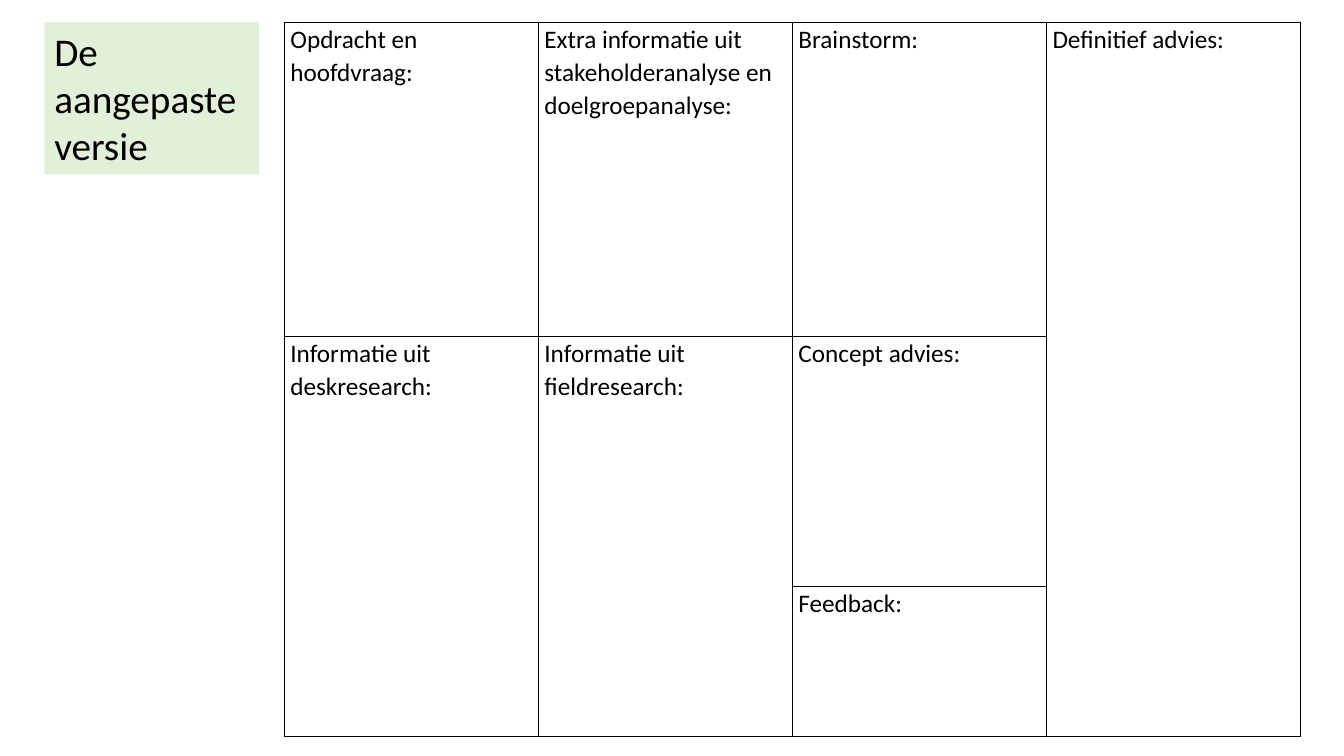
from lxml.etree import SubElement
from pptx import Presentation
from pptx.dml.color import RGBColor
from pptx.enum.shapes import MSO_SHAPE
from pptx.enum.text import MSO_ANCHOR, PP_ALIGN
from pptx.oxml.ns import qn
from pptx.util import Inches, Pt

TITLE = "De aangepaste versie"
CANVAS = [
    (0, 0, 1, "Opdracht en hoofdvraag:"),
    (0, 1, 1, "Extra informatie uit stakeholderanalyse en doelgroepanalyse:"),
    (0, 2, 1, "Brainstorm:"),
    (0, 3, 3, "Definitief advies:"),
    (1, 0, 2, "Informatie uit deskresearch:"),
    (1, 1, 2, "Informatie uit fieldresearch:"),
    (1, 2, 1, "Concept advies:"),
    (2, 2, 1, "Feedback:"),
]
COLORS = {"ink": "000000", "title": "E2F0D9"}
FONT = "Calibri"
TOP = 0.22
COLUMN_COUNT, COLUMN_WIDTH = 4, 2.52
ROW_HEIGHTS = [3.12, 2.48, 1.49]


def write(frame, text, size):
    paragraph = frame.paragraphs[0]
    paragraph.alignment = PP_ALIGN.LEFT
    run = paragraph.add_run()
    run.text = text
    run.font.size = Pt(size)
    run.font.name = FONT
    run.font.color.rgb = RGBColor.from_string(COLORS["ink"])
    return paragraph


def outline(cell):
    cell.fill.background()
    properties = cell._tc.get_or_add_tcPr()
    for position, side in enumerate(("lnL", "lnR", "lnT", "lnB")):
        border = SubElement(properties, qn(f"a:{side}"), w=str(Pt(1)))
        ink = SubElement(border, qn("a:solidFill"))
        SubElement(ink, qn("a:srgbClr"), val=COLORS["ink"])
        properties.insert(position, border)


def add_canvas(slide):
    canvas = slide.shapes.add_table(
        len(ROW_HEIGHTS), COLUMN_COUNT, Inches(2.82), Inches(TOP),
        Inches(COLUMN_COUNT * COLUMN_WIDTH), Inches(sum(ROW_HEIGHTS))).table
    canvas.first_row = canvas.horz_banding = False
    for column in canvas.columns:
        column.width = Inches(COLUMN_WIDTH)
    for row, height in zip(canvas.rows, ROW_HEIGHTS):
        row.height = Inches(height)
    for cell in canvas.iter_cells():
        outline(cell)
    for row, column, span, heading in CANVAS:
        cell = canvas.cell(row, column)
        if span > 1:
            cell.merge(canvas.cell(row + span - 1, column))
        cell.margin_left = cell.margin_right = Inches(0.06)
        cell.margin_top = cell.margin_bottom = 0
        cell.vertical_anchor = MSO_ANCHOR.TOP
        paragraph = write(cell.text_frame, heading, 18)
        paragraph.line_spacing = 1.07
        paragraph.space_after = Pt(8)


def add_title(slide):
    title = slide.shapes.add_shape(
        MSO_SHAPE.RECTANGLE, Inches(0.44), Inches(TOP), Inches(2.13), Inches(1.51))
    title.shadow.inherit = False
    title.fill.solid()
    title.fill.fore_color.rgb = RGBColor.from_string(COLORS["title"])
    title.line.fill.background()
    title.text_frame.word_wrap = True
    title.text_frame.vertical_anchor = MSO_ANCHOR.TOP
    write(title.text_frame, TITLE, 28)


def main():
    deck = Presentation()
    deck.slide_width, deck.slide_height = Inches(13.33), Inches(7.5)
    slide = deck.slides.add_slide(deck.slide_layouts[6])
    add_canvas(slide)
    add_title(slide)
    deck.save("out.pptx")


if __name__ == "__main__":
    main()
